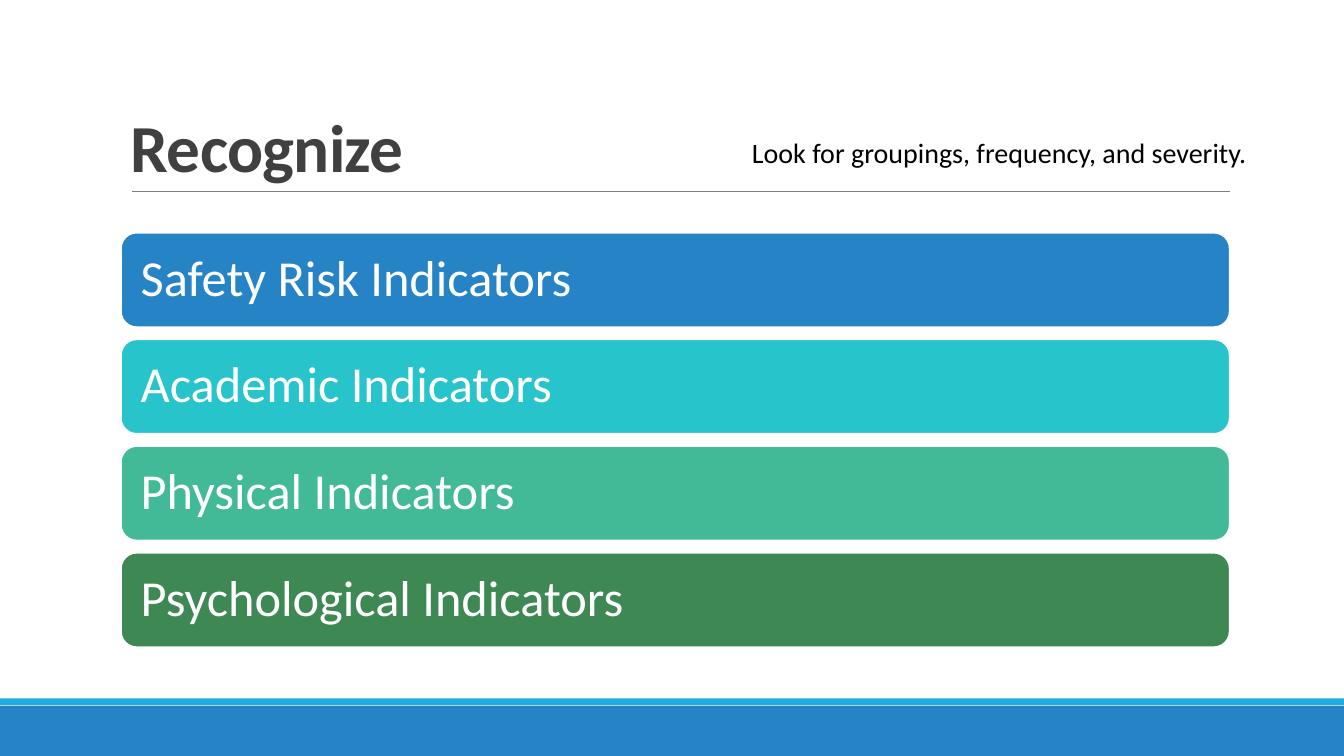
"""Build the Recognize slide: a title, a short hint and four indicator bars."""
from dataclasses import dataclass

from lxml import etree
from pptx import Presentation
from pptx.dml.color import RGBColor
from pptx.enum.shapes import MSO_CONNECTOR, MSO_SHAPE
from pptx.enum.text import MSO_ANCHOR, PP_ALIGN
from pptx.oxml.ns import qn
from pptx.util import Pt

RECTANGLE = MSO_SHAPE.RECTANGLE
ROUNDED = MSO_SHAPE.ROUNDED_RECTANGLE
STRAIGHT = MSO_CONNECTOR.STRAIGHT
TOP, MIDDLE, BOTTOM = MSO_ANCHOR.TOP, MSO_ANCHOR.MIDDLE, MSO_ANCHOR.BOTTOM
LEFT = PP_ALIGN.LEFT


@dataclass(frozen=True)
class Theme:
    font: str = "Calibri"
    title_size: int = 48
    bar_size: int = 36
    hint_size: int = 20
    title: str = "404040"
    hint: str = "000000"
    white: str = "FFFFFF"
    rule: str = "808080"
    blue: str = "2683C6"
    sky: str = "1CADE4"
    turquoise: str = "28C4CC"
    mint: str = "42BA97"
    green: str = "3E8853"


theme = Theme()


def add_block(kind, left, top, width, height, color):
    block = page.shapes.add_shape(kind, Pt(left), Pt(top), Pt(width), Pt(height))
    block.shadow.inherit = False
    block.fill.solid()
    block.fill.fore_color.rgb = RGBColor.from_string(color)
    block.line.fill.background()
    return block


def write(box, text, size, color, anchor):
    frame = box.text_frame
    frame.word_wrap = True
    frame.vertical_anchor = anchor
    para = frame.paragraphs[0]
    para.text = text
    para.alignment = LEFT
    para.font.name = theme.font
    para.font.size = Pt(size)
    para.font.color.rgb = RGBColor.from_string(color)
    return para


deck = Presentation()
deck.slide_width, deck.slide_height = Pt(960), Pt(540)
page = deck.slides.add_slide(deck.slide_layouts[6])

add_block(RECTANGLE, 0, 504, 960, 36, theme.blue)
add_block(RECTANGLE, 0, 498.75, 960, 4.8, theme.sky)

rule = page.shapes.add_connector(STRAIGHT, Pt(94.2), Pt(136.8), Pt(878.8), Pt(136.8))
rule.line.color.rgb = RGBColor.from_string(theme.rule)
rule.line.width = Pt(0.5)
etree.SubElement(rule.element.spPr, qn("a:effectLst"))

title_box = page.shapes.add_textbox(Pt(86.4), Pt(22.5), Pt(792), Pt(114.2))
title = write(title_box, "Recognize", theme.title_size, theme.title, BOTTOM)
title.font.bold = True
title.line_spacing = 0.85
for span in title.runs:
    span.font._element.set("spc", "-50")

bars = [
    ("Safety Risk Indicators", theme.blue),
    ("Academic Indicators", theme.turquoise),
    ("Physical Indicators", theme.mint),
    ("Psychological Indicators", theme.green),
]
BAR_TOP, BAR_PITCH = 166.2, 76.2
for row, (label, color) in enumerate(bars):
    bar = add_block(ROUNDED, 86.4, BAR_TOP + row * BAR_PITCH, 792, 67.5, color)
    bar.line.color.rgb = RGBColor.from_string(theme.white)
    bar.line.width = Pt(1.25)
    bar.text_frame.margin_left = bar.text_frame.margin_right = Pt(10.8)
    para = write(bar, label, theme.bar_size, theme.white, MIDDLE)
    para.line_spacing = 0.9

hint_box = page.shapes.add_textbox(Pt(530), Pt(92.9), Pt(430), Pt(31.5))
write(hint_box, "Look for groupings, frequency, and severity.", theme.hint_size, theme.hint, TOP)

deck.save("out.pptx")
